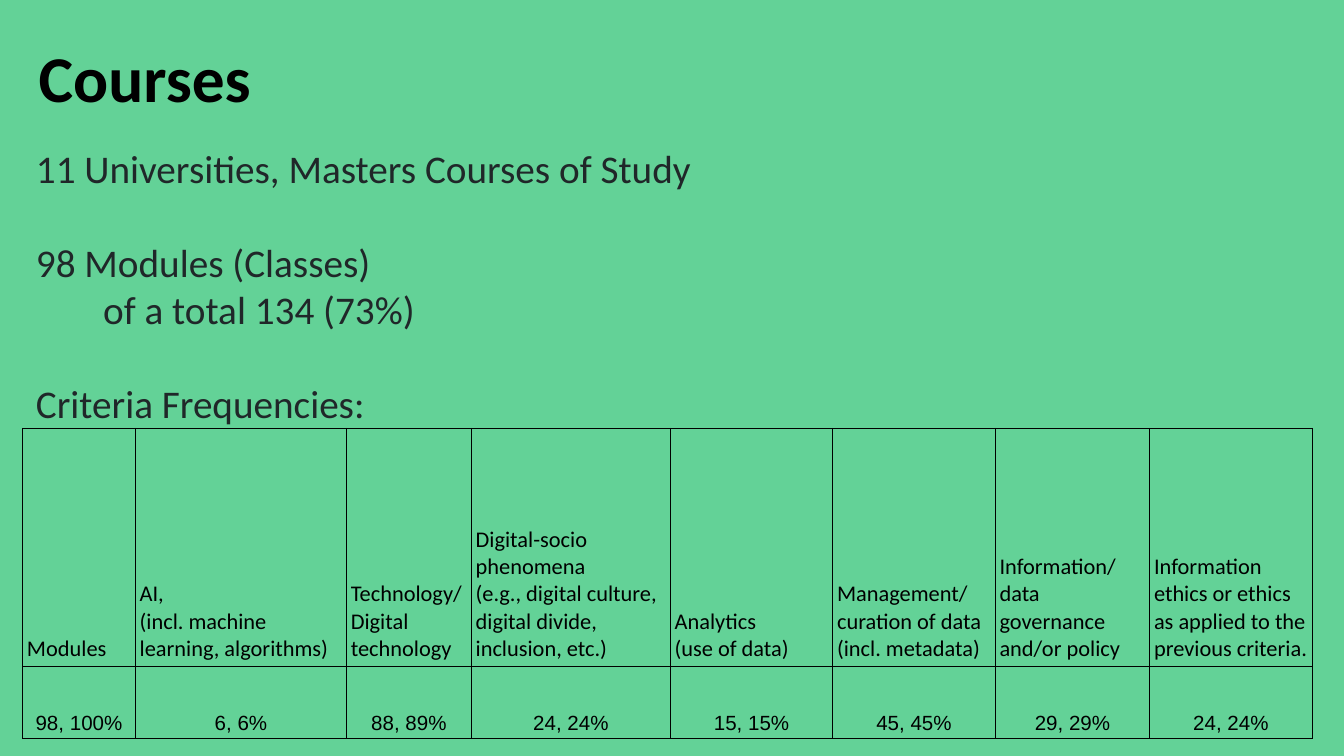
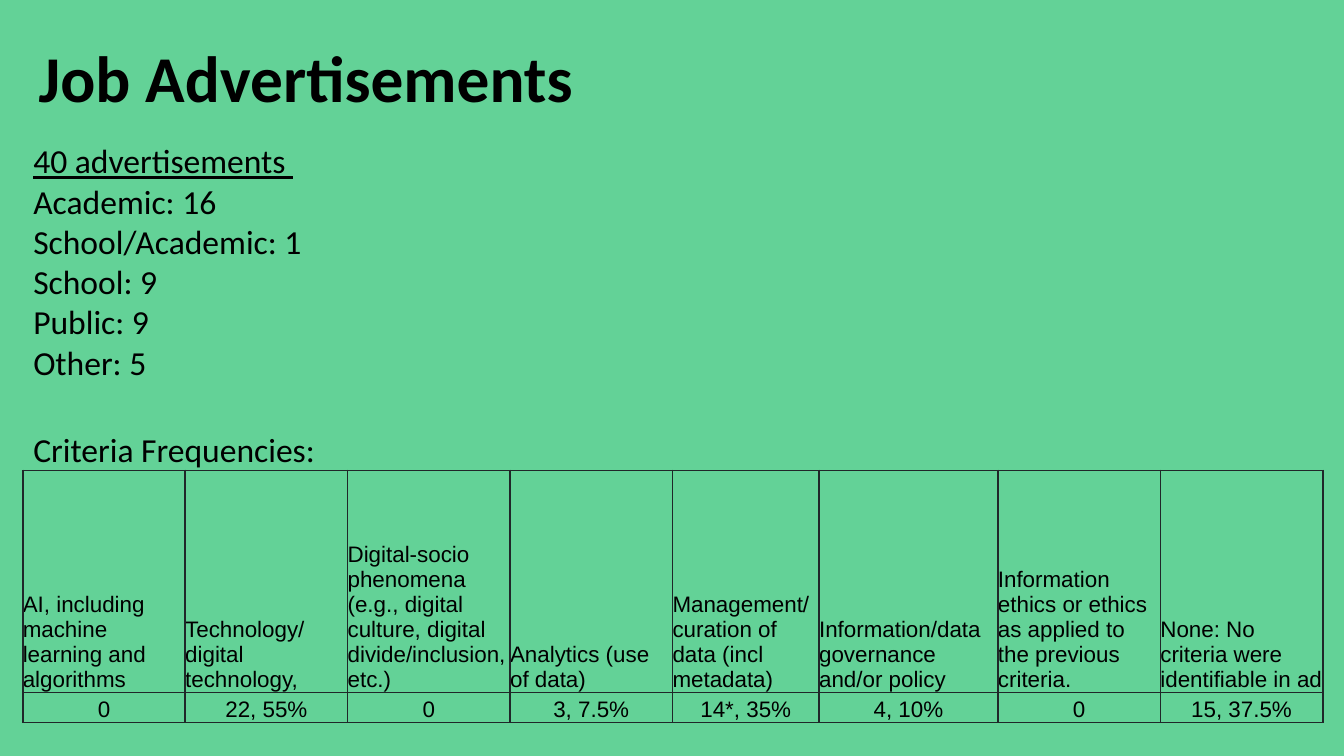
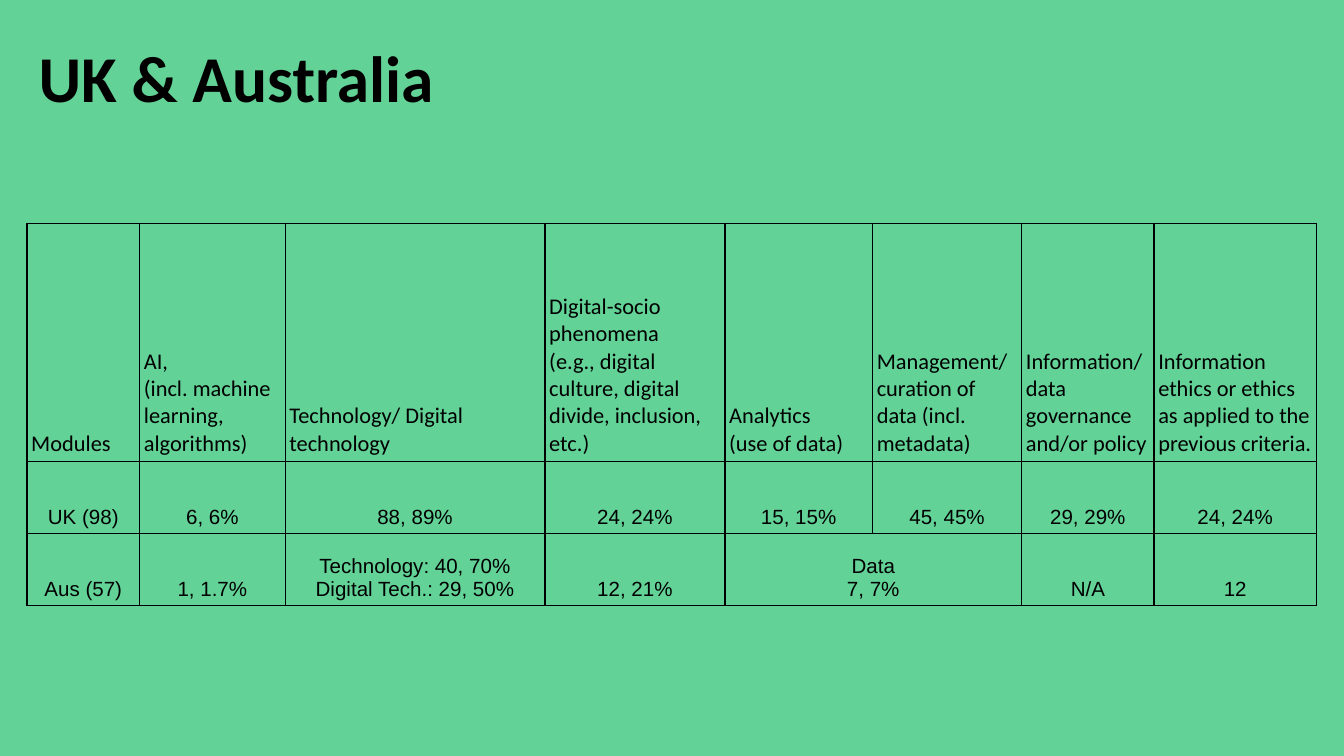
from lxml import etree
from pptx import Presentation
from pptx import util as u
from pptx.dml.color import RGBColor
from pptx.enum import text
from pptx.oxml.ns import qn

GREEN = RGBColor(0x63, 0xD2, 0x97)
BLACK = RGBColor(0x00, 0x00, 0x00)
SLATE = RGBColor(0x20, 0x27, 0x29)

TITLE = {"name": "Calibri", "size": u.Pt(35), "bold": True}
LEAD = {"name": "Calibri", "size": u.Pt(21)}
LIST = {"name": "Calibri", "size": u.Pt(18)}
HEAD = {"name": "Calibri", "size": u.Pt(12)}
PLAIN = {"name": "Arial", "size": u.Pt(12)}
COUNT = {"name": "Arial", "size": u.Pt(11)}

LEFT, MID = text.PP_ALIGN.LEFT, text.PP_ALIGN.CENTER
GAP = u.Pt(25.2)
PAD = 0.25

CRITERIA = (
    "Modules",
    "AI,\n(incl. machine learning, algorithms)",
    "Technology/ Digital technology",
    "Digital-socio phenomena\n(e.g., digital culture, digital divide, inclusion, etc.)",
    "Analytics\n(use of data)",
    "Management/\ncuration of data (incl. metadata)",
    "Information/\ndata governance and/or policy",
    "Information ethics or ethics as applied to the previous criteria.",
)
UK = ("6, 6%", "88, 89%", "24, 24%", "15, 15%", "45, 45%", "29, 29%", "24, 24%")


def style(item, values):
    for key, value in values.items():
        setattr(item, key, value)


def pads(x, y):
    """Margins in cm: x at the sides, y above and below."""
    return {"margin_left": u.Cm(x), "margin_right": u.Cm(x),
            "margin_top": u.Cm(y), "margin_bottom": u.Cm(y)}


class Deck:
    def __init__(self):
        self.prs = Presentation()
        self.prs.slide_width = u.Cm(25.4)
        self.prs.slide_height = u.Cm(14.29)
        fill = self.prs.slide_master.background.fill
        fill.solid()
        fill.fore_color.rgb = GREEN
        self.slide = None

    def words(self, frame, words, font, color=BLACK, align=LEFT):
        frame.text = words
        for para in frame.paragraphs:
            para.alignment = align
            for run in para.runs:
                style(run.font, font)
                run.font.color.rgb = color

    def frame(self, frame, x, y):
        style(frame, {"word_wrap": True, "auto_size": text.MSO_AUTO_SIZE.NONE,
                      "vertical_anchor": text.MSO_ANCHOR.TOP, **pads(x, y)})

    def page(self, title):
        self.slide = self.prs.slides.add_slide(self.prs.slide_layouts[5])
        shape = self.slide.shapes.title
        style(shape, {"left": u.Cm(0.48), "top": u.Cm(0.46),
                      "width": u.Cm(13.28), "height": u.Cm(2)})
        self.frame(shape.text_frame, PAD, PAD)
        self.words(shape.text_frame, title, TITLE)

    def body(self, box, blocks, font, color=BLACK, pad=PAD):
        """Set blocks of lines, with a gap before each block but the first."""
        frame = self.slide.shapes.add_textbox(*map(u.Cm, box)).text_frame
        self.frame(frame, PAD, pad)
        self.words(frame, "\n".join(blocks), font, color)
        line = 0
        for block in blocks:
            if line:
                frame.paragraphs[line].space_before = GAP
            line += block.count("\n") + 1
        return frame

    def border(self, cell, color, width):
        props = cell._tc.get_or_add_tcPr()
        for spot, side in enumerate(("lnL", "lnR", "lnT", "lnB")):
            line = etree.Element(qn("a:" + side), w=str(u.Pt(width)))
            fill = etree.SubElement(line, qn("a:solidFill"))
            etree.SubElement(fill, qn("a:srgbClr"), val=str(color))
            props.insert(spot, line)

    def table(self, left, top, cols, highs, rows, head=HEAD, count=COUNT,
              pad=0.08, line=(BLACK, 0.75)):
        """Draw a table; None in a row joins the cell to the one on its left."""
        grid = self.slide.shapes.add_table(
            len(rows), len(cols), u.Cm(left), u.Cm(top),
            u.Cm(sum(cols)), u.Cm(sum(highs))).table
        style(grid, {"first_row": False, "horz_banding": False})
        for col, width in zip(grid.columns, cols):
            col.width = u.Cm(width)
        for row, high in zip(grid.rows, highs):
            row.height = u.Cm(high)
        for r, row in enumerate(rows):
            font, align = (count, MID) if r else (head, LEFT)
            for c, words in enumerate(row):
                cell = grid.cell(r, c)
                style(cell, {"vertical_anchor": text.MSO_ANCHOR.BOTTOM, **pads(pad, pad)})
                cell.fill.background()
                self.border(cell, *line)
                if words is None:
                    grid.cell(r, c - 1).merge(cell)
                else:
                    self.words(cell.text_frame, words, font, align=align)


def courses(deck):
    deck.page("Courses")
    deck.body((0.43, 2.48, 24.54, 5.6), (
        "11 Universities, Masters Courses of Study",
        "98 Modules (Classes)\n\tof a total 134 (73%)",
        "Criteria Frequencies:"), LEAD, SLATE)
    deck.table(0.43, 8.1, (2.13, 3.99, 2.36, 3.76, 3.07, 3.07, 2.92, 3.07),
               (4.5, 1.36), (CRITERIA, ("98, 100%", *UK)))


def jobs(deck):
    deck.page("Job Advertisements")
    frame = deck.body((0.38, 2.52, 24.54, 6.5), (
        "40 advertisements \nAcademic: 16\nSchool/Academic: 1\n"
        "School: 9\nPublic: 9\nOther: 5",
        "Criteria Frequencies:"), LIST, pad=0.13)
    frame.paragraphs[0].runs[0].font.underline = True
    heads = (
        "AI, including machine learning and algorithms",
        "Technology/ digital technology,",
        "Digital-socio phenomena (e.g., digital culture, digital divide/inclusion, etc.)",
        "Analytics (use of data)",
        "Management/curation of data (incl metadata)",
        "Information/data governance and/or policy",
        CRITERIA[-1],
        "None: No criteria were identifiable in ad",
    )
    counts = ("0", "22, 55%", "0", "3, 7.5%", "14*, 35%", "4, 10%", "0", "15, 37.5%")
    deck.table(0.43, 8.89, (3.07,) * 4 + (2.77, 3.38, 3.07, 3.07), (4.2, 0.57),
               (heads, counts), PLAIN, PLAIN, 0, (SLATE, 1))


def lands(deck):
    deck.page("UK & Australia")
    aus = ("Aus (57)", "1, 1.7%", "Technology: 40, 70%\nDigital Tech.: 29, 50%",
           "12, 21%", "Data\n7, 7%", None, "N/A", "12")
    deck.table(0.51, 4.22, (2.13, 2.75, 4.91, 3.4, 2.79, 2.82, 2.5, 3.07),
               (4.5, 1.36, 1.36), (CRITERIA, ("UK (98)", *UK), aus))


def main():
    deck = Deck()
    for build in (courses, jobs, lands):
        build(deck)
    deck.prs.save("out.pptx")


if __name__ == "__main__":
    main()
